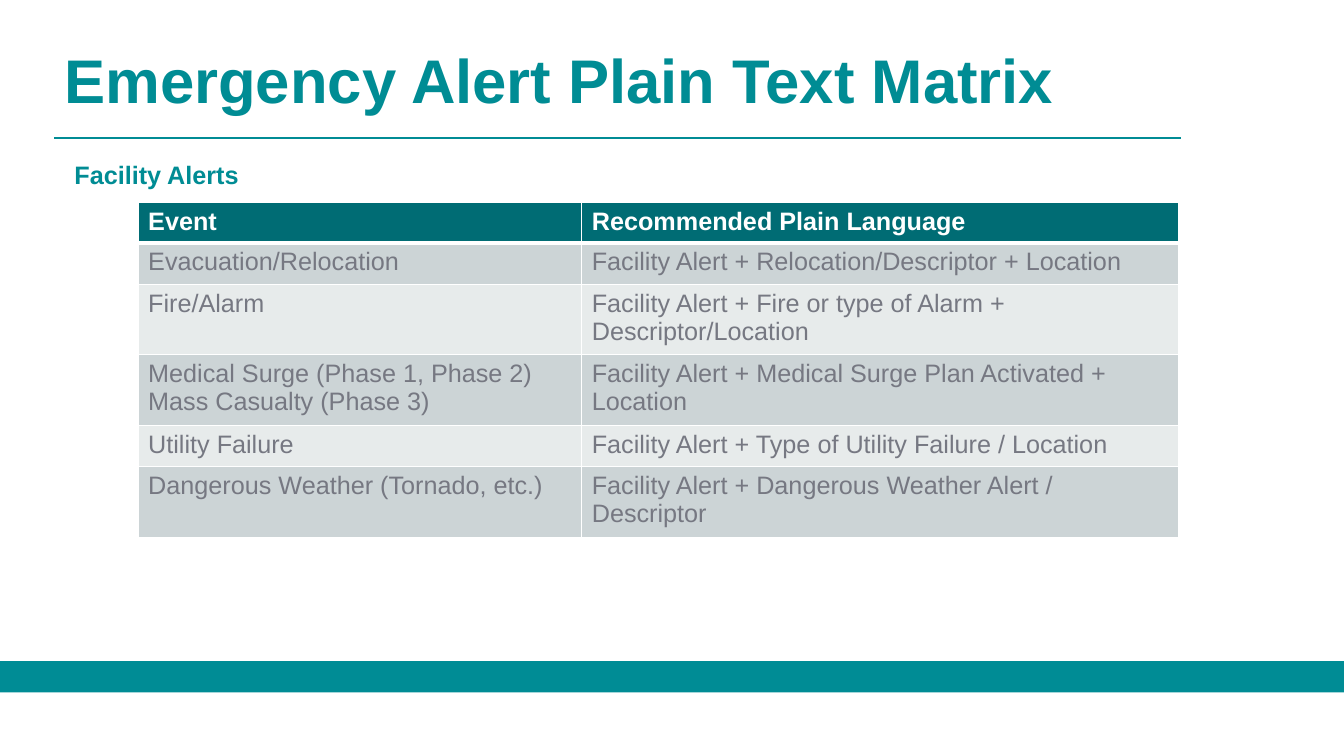
from dataclasses import dataclass

from lxml import etree
from pptx import Presentation
from pptx.dml.color import RGBColor
from pptx.enum.shapes import MSO_CONNECTOR, MSO_SHAPE
from pptx.oxml.ns import qn
from pptx.util import Inches, Pt

RECTANGLE = MSO_SHAPE.RECTANGLE
STRAIGHT = MSO_CONNECTOR.STRAIGHT


@dataclass(frozen=True)
class Theme:
    font: str = "Arial"
    title_size: int = 44
    text_size: int = 18
    teal: str = "008C95"
    heading: str = "008C94"
    header_fill: str = "006C74"
    bands: tuple = ("CCD4D6", "E7EBEB")
    body: str = "767882"
    white: str = "FFFFFF"


HEADER = ("Event", "Recommended Plain Language")
ALERTS = [
    ("Evacuation/Relocation", "Facility Alert + Relocation/Descriptor + Location"),
    ("Fire/Alarm", "Facility Alert + Fire or type of Alarm + Descriptor/Location"),
    ("Medical Surge (Phase 1, Phase 2)\nMass Casualty (Phase 3)",
     "Facility Alert + Medical Surge Plan Activated + Location"),
    ("Utility Failure", "Facility Alert + Type of Utility Failure / Location"),
    ("Dangerous Weather (Tornado, etc.)",
     "Facility Alert + Dangerous Weather Alert / Descriptor"),
]
COLUMN_WIDTHS = (4.4, 5.92)
ONE_LINE, TWO_LINES = 0.41, 0.66
ROW_HEIGHTS = (0.37, ONE_LINE, TWO_LINES, TWO_LINES, ONE_LINE, TWO_LINES)


class SlideBuilder:
    def __init__(self, slide, theme):
        self.slide = slide
        self.theme = theme

    def style_text(self, frame, size, color, bold):
        for paragraph in frame.paragraphs:
            font = paragraph.font
            font.name, font.size, font.bold = self.theme.font, Pt(size), bold
            font.color.rgb = RGBColor.from_string(color)

    def bar(self, left, top, width, height):
        band = self.slide.shapes.add_shape(
            RECTANGLE, Inches(left), Inches(top), Inches(width), Inches(height))
        band.shadow.inherit = False
        band.fill.solid()
        band.fill.fore_color.rgb = RGBColor.from_string(self.theme.teal)
        band.line.fill.background()

    def rule(self, left, right, y):
        divider = self.slide.shapes.add_connector(
            STRAIGHT, Inches(left), Inches(y), Inches(right), Inches(y))
        divider.line.color.rgb = RGBColor.from_string(self.theme.teal)
        divider.line.width = Pt(1)
        etree.SubElement(divider._element.spPr, qn("a:effectLst"))

    def heading(self, text, left, top, width, height, size, wrap):
        box = self.slide.shapes.add_textbox(
            Inches(left), Inches(top), Inches(width), Inches(height))
        frame = box.text_frame
        frame.word_wrap = wrap
        frame.text = text
        self.style_text(frame, size, self.theme.heading, True)
        return frame

    def cell_borders(self, cell, top, bottom):
        """Draw white borders; the given widths are in points."""
        properties = cell._tc.get_or_add_tcPr()
        sides = (("L", 1), ("R", 1), ("T", top), ("B", bottom))
        for position, (side, width) in enumerate(sides):
            border = etree.Element(qn(f"a:ln{side}"), w=str(Pt(width)))
            fill = etree.SubElement(border, qn("a:solidFill"))
            etree.SubElement(fill, qn("a:srgbClr"), val=self.theme.white)
            properties.insert(position, border)

    def table(self, rows, left, top, widths, heights):
        theme = self.theme
        matrix = self.slide.shapes.add_table(
            len(rows), len(widths), Inches(left), Inches(top),
            Inches(sum(widths)), Inches(sum(heights))).table
        for column, width in zip(matrix.columns, widths):
            column.width = Inches(width)
        for index, (texts, height) in enumerate(zip(rows, heights)):
            matrix.rows[index].height = Inches(height)
            is_header = index == 0
            fill = theme.header_fill if is_header else theme.bands[(index - 1) % 2]
            color = theme.white if is_header else theme.body
            for cell, text in zip(matrix.rows[index].cells, texts):
                cell.text = text
                self.style_text(cell.text_frame, theme.text_size, color, is_header)
                cell.fill.solid()
                cell.fill.fore_color.rgb = RGBColor.from_string(fill)
                self.cell_borders(cell, top=3 if index == 1 else 1,
                                  bottom=3 if is_header else 1)


def main():
    presentation = Presentation()
    presentation.slide_width = Inches(13.33)
    presentation.slide_height = Inches(7.5)
    theme = Theme()
    slide = presentation.slides.add_slide(presentation.slide_layouts[6])
    builder = SlideBuilder(slide, theme)

    builder.bar(0, 6.56, 13.33, 0.31)
    title = builder.heading("Emergency Alert Plain Text Matrix",
                            0.54, 0.4, 11.5, 1.45, theme.title_size, True)
    title.margin_top = Inches(0.1)
    title.paragraphs[0].line_spacing = 0.9
    builder.rule(0.54, 11.71, 1.37)
    builder.table([HEADER, *ALERTS], 1.37, 2.01, COLUMN_WIDTHS, ROW_HEIGHTS)
    builder.heading("Facility Alerts", 0.64, 1.53, 1.85, 0.4, theme.text_size, False)

    presentation.save("out.pptx")


if __name__ == "__main__":
    main()
